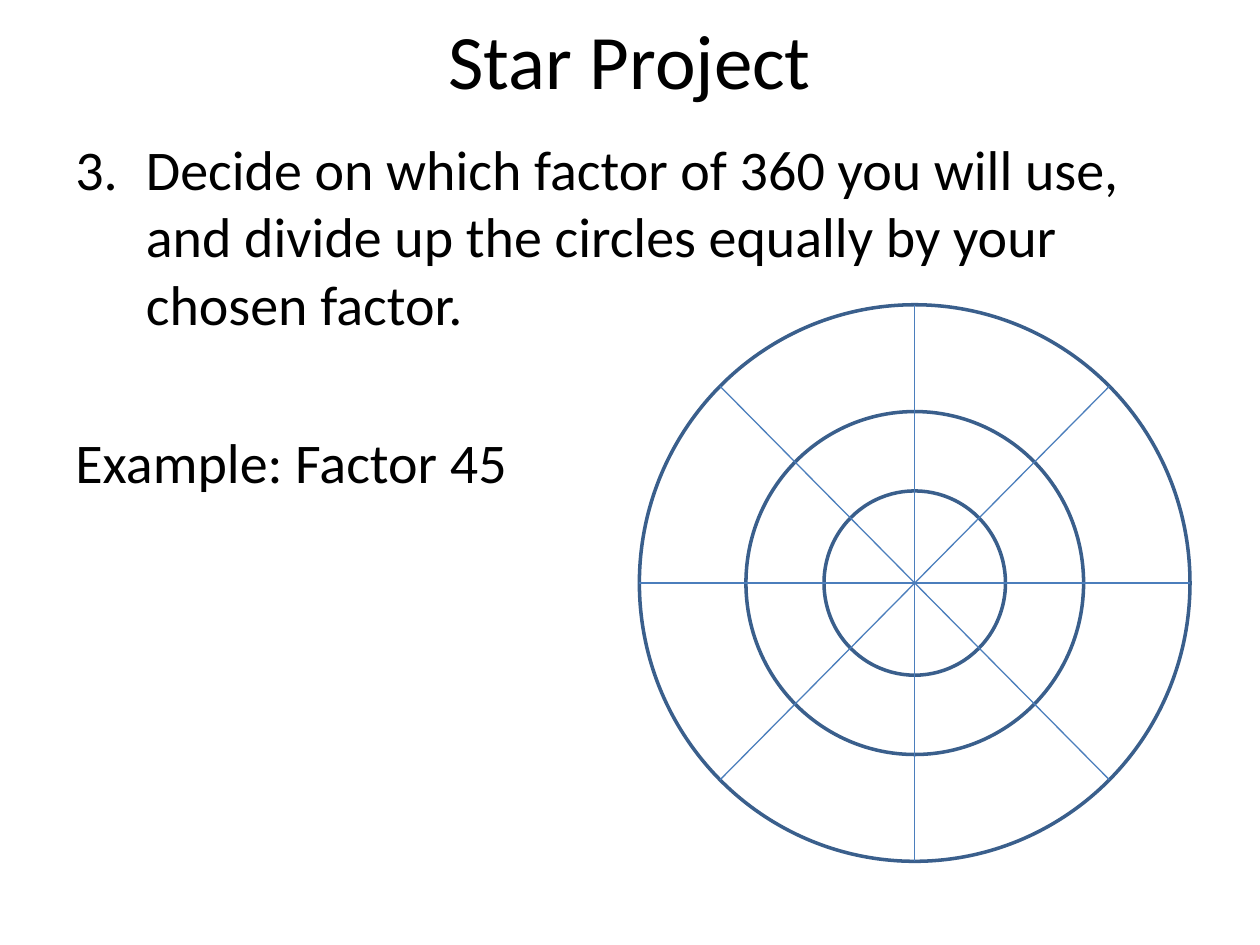
import math
from dataclasses import dataclass

import pptx
import pptx.util
import pptx.dml.color
import pptx.enum.shapes
import pptx.enum.text
from lxml import etree

WIDE, HIGH = 10, 7.5
HUES = {"ink": "000000", "ring": "3A5F8C", "spoke": "4B7EBC"}
NS = "http://schemas.openxmlformats.org/drawingml/2006/main"
HUB = (0.726, 0.617)  # shares of the slide's width and height
FACTOR = 45


@dataclass
class Ring:
    wide: float
    high: float


@dataclass
class Box:
    left: float
    top: float
    wide: float
    high: float


@dataclass
class Para:
    text: str
    size: float
    gap: float = 0
    start: int = 0
    align: pptx.enum.text.PP_ALIGN = pptx.enum.text.PP_ALIGN.LEFT


RINGS = [Ring(0.144, 0.195), Ring(0.268, 0.363), Ring(0.437, 0.589)]
TITLE = [Para("Star Project", 44, align=pptx.enum.text.PP_ALIGN.CENTER)]
BODY = [
    Para("Decide on which factor of 360 you will use, and divide up "
         "the circles equally by your chosen factor.", 32, 6.4, start=3),
    Para("Example: Factor 45", 32, 52),
]


def across(share: float) -> int:
    return pptx.util.Inches(share * WIDE)


def down(share: float) -> int:
    return pptx.util.Inches(share * HIGH)


def hue(name: str) -> pptx.dml.color.RGBColor:
    return pptx.dml.color.RGBColor.from_string(HUES[name])


def assign(item, values: dict) -> None:
    for name, value in values.items():
        setattr(item, name, value)


def indent(para, start: int) -> None:
    """Give a hanging indent, numbered when start is above zero."""
    props = para._p.get_or_add_pPr()
    hang = pptx.util.Inches(0.56)
    props.set("marL", str(hang))
    props.set("indent", str(-hang))
    if start:
        mark = etree.SubElement(props, f"{{{NS}}}buAutoNum")
        mark.set("type", "arabicPeriod")
        mark.set("startAt", str(start))
    else:
        etree.SubElement(props, f"{{{NS}}}buNone")


def write(slide, box: Box, paras: list[Para], anchor, hang: bool) -> None:
    shape = slide.shapes.add_textbox(
        across(box.left), down(box.top), across(box.wide), down(box.high))
    frame = shape.text_frame
    assign(frame, {"word_wrap": True, "vertical_anchor": anchor})
    for index, item in enumerate(paras):
        para = frame.add_paragraph() if index else frame.paragraphs[0]
        assign(para, {"alignment": item.align,
                      "space_before": pptx.util.Pt(item.gap)})
        if hang:
            indent(para, item.start)
        run = para.add_run()
        run.text = item.text
        assign(run.font, {"name": "Calibri", "size": pptx.util.Pt(item.size)})
        run.font.color.rgb = hue("ink")


def stroke(shape, name: str, width: float) -> None:
    shape.line.color.rgb = hue(name)
    shape.line.width = pptx.util.Pt(width)


def circle(slide, ring: Ring) -> None:
    shape = slide.shapes.add_shape(
        pptx.enum.shapes.MSO_SHAPE.OVAL,
        across(HUB[0] - ring.wide / 2), down(HUB[1] - ring.high / 2),
        across(ring.wide), down(ring.high))
    shape.shadow.inherit = False
    shape.fill.background()
    stroke(shape, "ring", 2)


def spoke(slide, ring: Ring, angle: float) -> None:
    """Draw a full diameter of the ring at an angle in degrees."""
    dx = ring.wide / 2 * math.cos(math.radians(angle))
    dy = ring.high / 2 * math.sin(math.radians(angle))
    line = slide.shapes.add_connector(
        pptx.enum.shapes.MSO_CONNECTOR.STRAIGHT,
        across(HUB[0] - dx), down(HUB[1] - dy),
        across(HUB[0] + dx), down(HUB[1] + dy))
    stroke(line, "spoke", 0.75)
    etree.SubElement(line._element.spPr, f"{{{NS}}}effectLst")


def main() -> None:
    deck = pptx.Presentation()
    assign(deck, {"slide_width": across(1), "slide_height": down(1)})
    slide = deck.slides.add_slide(deck.slide_layouts[6])
    anchor = pptx.enum.text.MSO_ANCHOR
    write(slide, Box(0.05, 0, 0.9, 0.125), TITLE, anchor.MIDDLE, False)
    write(slide, Box(0.05, 0.136, 0.9, 0.757), BODY, anchor.TOP, True)
    for ring in RINGS:
        circle(slide, ring)
    for angle in range(0, 180, FACTOR):
        spoke(slide, RINGS[-1], angle)
    deck.save("out.pptx")


if __name__ == "__main__":
    main()
